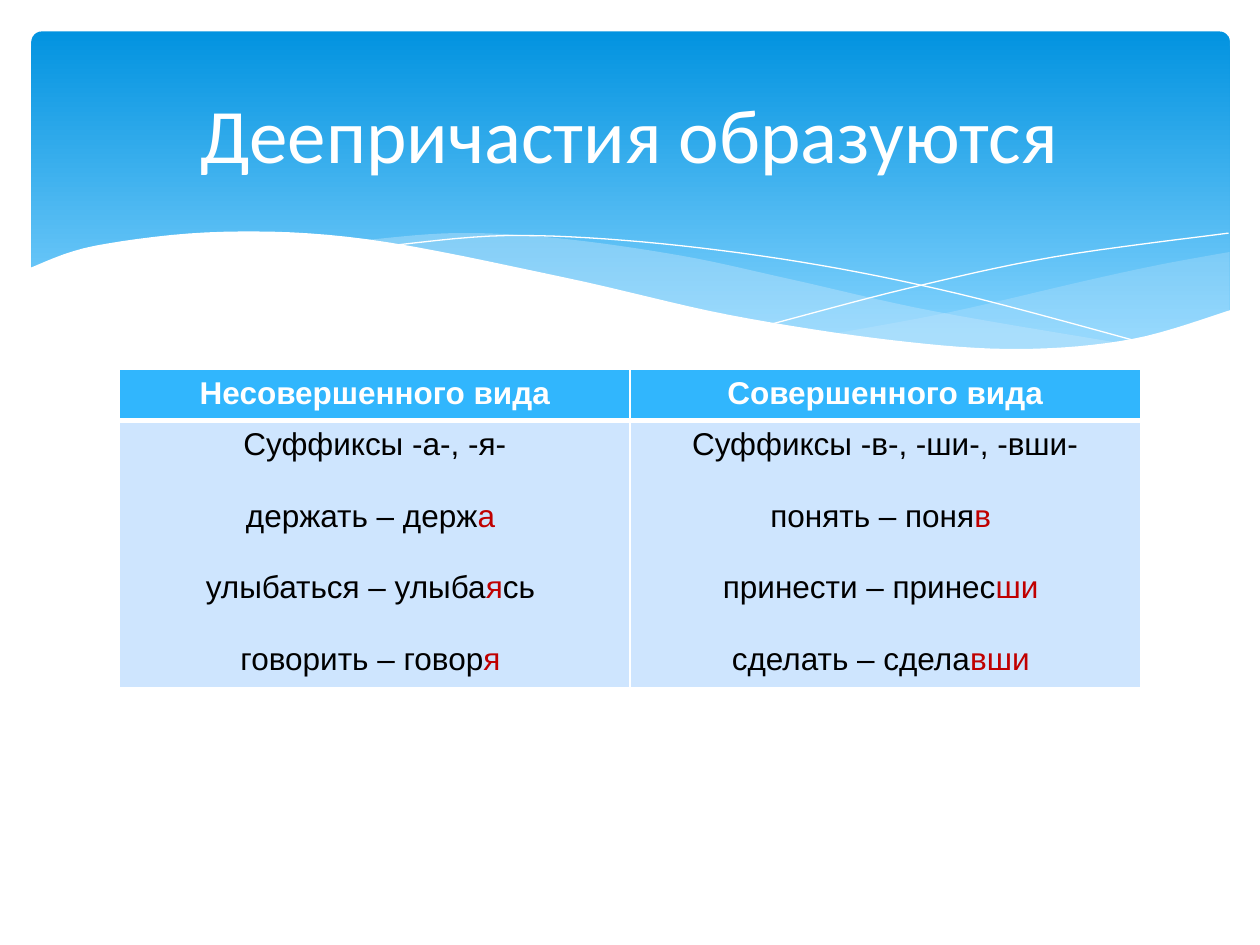
from dataclasses import dataclass
from typing import Optional

from lxml import etree
from pptx import Presentation
from pptx.dml.color import RGBColor
from pptx.enum import shapes, text
from pptx.oxml import ns
from pptx.util import Inches, Pt

WHITE, BLACK, RED = "FFFFFF", "000000", "C00000"
HEADER_BLUE, BODY_BLUE, MIST = "31B6FD", "CEE5FE", "C6E7FC"
LINE_HEIGHT = Pt(20.7)
STEPS = 8

Point = tuple[float, float]


@dataclass
class Wave:
    """A crest through knots, filled down to its base if it has one."""
    knots: list[Point]
    base: Optional[float] = None
    fill: str = WHITE
    opacity: int = 100


@dataclass
class Column:
    heading: str
    suffixes: str
    examples: list[tuple[str, str, str]]  # stem, suffix, ending


WAVES = [
    Wave([(6.61, 2.65), (7.53, 2.48), (8.61, 2.23), (9.21, 2.1), (9.76, 2)],
         2.8, MIST, 29),
    Wave([(2.86, 1.91), (3.61, 1.85), (4.42, 1.89), (5.41, 2.03), (6.29, 2.22),
          (7.41, 2.47), (8.93, 2.73)], 2.8, MIST, 40),
    Wave([(3.09, 1.95), (4.01, 1.87), (5.1, 1.92), (6.36, 2.08), (7.6, 2.33),
          (9.07, 2.72)]),
    Wave([(6.13, 2.57), (7.2, 2.29), (8.36, 2.04), (9.75, 1.85)]),
    Wave([(0.23, 2.13), (0.76, 1.95), (1.77, 1.84), (2.92, 1.9), (4.47, 2.2),
          (5.79, 2.5), (7.08, 2.7), (8.09, 2.77), (8.99, 2.69), (9.77, 2.46)], 3.29),
]

COLUMNS = [
    Column("Несовершенного вида", "Суффиксы -а-, -я-",
           [("держать – держ", "а ", ""),
            ("улыбаться – улыба", "я", "сь "),
            ("говорить – говор", "я ", "")]),
    Column("Совершенного вида", "Суффиксы -в-, -ши-, -вши-",
           [("понять – поня", "в ", ""),
            ("принести – принес", "ши ", ""),
            ("сделать – сдела", "вши ", "")]),
]


def rgb(value: str) -> RGBColor:
    return RGBColor.from_string(value)


def spline(knots: list[Point]) -> list[Point]:
    """Sample a Catmull-Rom curve through the knots."""
    padded = [knots[0], *knots, knots[-1]]
    points = [knots[0]]
    for before, start, end, after in zip(padded, padded[1:], padded[2:], padded[3:]):
        for step in range(1, STEPS + 1):
            t = step / STEPS
            points.append(tuple(
                b + ((c - a) * t + (2 * a - 5 * b + 4 * c - d) * t ** 2
                     + (3 * b - a - 3 * c + d) * t ** 3) / 2
                for a, b, c, d in zip(before, start, end, after)))
    return points


def draw_banner(slide) -> None:
    banner = slide.shapes.add_shape(shapes.MSO_SHAPE.ROUNDED_RECTANGLE, Inches(0.25),
                                    Inches(0.25), Inches(9.51), Inches(2.7))
    banner.adjustments[0] = 0.03
    banner.shadow.inherit = False
    banner.line.fill.background()
    banner.fill.gradient()
    banner.fill.gradient_angle = 270
    for stop, (position, colour) in zip(banner.fill.gradient_stops,
                                        [(0, "0293E0"), (0.9, "83D3FE")]):
        stop.position = position
        stop.color.rgb = rgb(colour)


def draw_wave(slide, wave: Wave) -> None:
    outline = spline(wave.knots)
    filled = wave.base is not None
    if filled:
        outline += [(outline[-1][0], wave.base), (outline[0][0], wave.base)]
    start, *rest = [(Inches(x), Inches(y)) for x, y in outline]
    builder = slide.shapes.build_freeform(*start)
    builder.add_line_segments(rest, close=filled)
    curve = builder.convert_to_shape()
    curve.shadow.inherit = False
    if not filled:
        curve.fill.background()
        curve.line.color.rgb = rgb(wave.fill)
        curve.line.width = Pt(0)
        return
    curve.line.fill.background()
    curve.fill.solid()
    curve.fill.fore_color.rgb = rgb(wave.fill)
    if wave.opacity < 100:
        colour = curve._element.spPr.find(ns.qn("a:solidFill"))[0]
        etree.SubElement(colour, ns.qn("a:alpha"), val=str(wave.opacity * 1000))


def add_run(paragraph, wording: str, colour: str, size: int = 18,
            font: str = "Arial", bold: bool = False) -> None:
    paragraph.alignment = text.PP_ALIGN.CENTER
    run = paragraph.add_run()
    run.text = wording
    run.font.name, run.font.size, run.font.bold = font, Pt(size), bold
    run.font.color.rgb = rgb(colour)


def draw_title(slide) -> None:
    title = slide.shapes.add_textbox(Inches(0.5), Inches(0.37), Inches(9), Inches(1.37))
    title.text_frame.word_wrap = True
    title.text_frame.vertical_anchor = text.MSO_ANCHOR.MIDDLE
    add_run(title.text_frame.paragraphs[0], "Деепричастия образуются", WHITE, 44, "Calibri")


def style_cell(cell, fill: str, top: int, bottom: int) -> None:
    """Fill a cell and give it white borders, with widths in points."""
    cell.fill.solid()
    cell.fill.fore_color.rgb = rgb(fill)
    properties = cell._tc.get_or_add_tcPr()
    sides = {"lnL": 1, "lnR": 1, "lnT": top, "lnB": bottom}
    for index, (side, width) in enumerate(sides.items()):
        border = etree.Element(ns.qn(f"a:{side}"), w=str(int(Pt(width))))
        solid = etree.SubElement(border, ns.qn("a:solidFill"))
        etree.SubElement(solid, ns.qn("a:srgbClr"), val=WHITE)
        properties.insert(index, border)


def draw_table(slide) -> None:
    table = slide.shapes.add_table(2, len(COLUMNS), Inches(0.95), Inches(2.93),
                                   Inches(8.1), Inches(2.53)).table
    table.horz_banding = False
    table.rows[0].height = Inches(0.41)
    table.rows[1].height = Inches(2.12)
    for index, column in enumerate(COLUMNS):
        heading, body = table.cell(0, index), table.cell(1, index)
        style_cell(heading, HEADER_BLUE, 1, 3)
        style_cell(body, BODY_BLUE, 3, 1)
        add_run(heading.text_frame.paragraphs[0], column.heading, WHITE, bold=True)
        add_run(body.text_frame.paragraphs[0], column.suffixes, BLACK)
        for stem, suffix, ending in column.examples:
            example = body.text_frame.add_paragraph()
            example.space_before = LINE_HEIGHT
            add_run(example, stem, BLACK)
            add_run(example, suffix, RED)
            if ending:
                add_run(example, ending, BLACK)


def main() -> None:
    deck = Presentation()
    deck.slide_width, deck.slide_height = Inches(10), Inches(7.5)
    slide = deck.slides.add_slide(deck.slide_layouts[6])
    draw_banner(slide)
    for wave in WAVES:
        draw_wave(slide, wave)
    draw_table(slide)
    draw_title(slide)
    deck.save("out.pptx")


if __name__ == "__main__":
    main()
